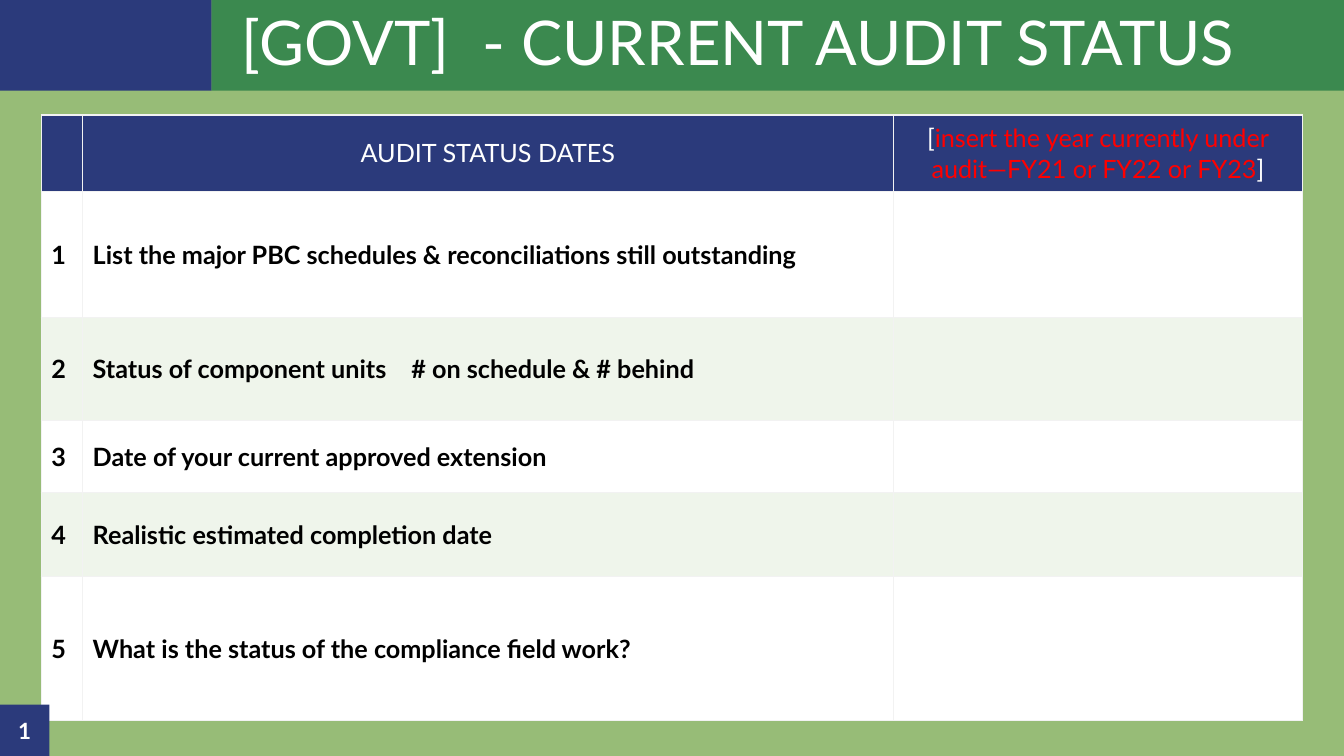
"""Build the current audit status slide."""
from dataclasses import dataclass

from lxml.etree import SubElement
from pptx import Presentation
from pptx.dml.color import RGBColor as Color
from pptx.enum.shapes import MSO_SHAPE as Shape
from pptx.enum.text import MSO_ANCHOR as Anchor, PP_ALIGN as Align
from pptx.oxml.ns import qn
from pptx.util import Inches, Pt


@dataclass(frozen=True)
class Theme:
    font: str = "Lato"
    page: str = "97BC77"
    navy: str = "2B3A7B"
    green: str = "3B894F"
    band: str = "EFF5EB"
    border: str = "F2F2F2"
    white: str = "FFFFFF"
    black: str = "000000"
    red: str = "FF0000"
    title_size: int = 44
    table_size: int = 18
    number_size: int = 16


theme = Theme()


def write(frame, spans, size, bold=False, align=Align.LEFT, tab=None):
    """Write coloured spans into the first paragraph, with an optional tab stop."""
    para = frame.paragraphs[0]
    para.alignment = align
    if tab:
        stops = SubElement(para._p.get_or_add_pPr(), qn("a:tabLst"))
        SubElement(stops, qn("a:tab"), pos=str(Inches(tab)), algn="l")
    for text, color in spans:
        span = para.add_run()
        span.text = text
        for name, value in {"name": theme.font, "size": Pt(size), "bold": bold}.items():
            setattr(span.font, name, value)
        span.font.color.rgb = Color.from_string(color)
    return para


def add_block(page, left, top, width, height, color):
    """Add a plain filled rectangle."""
    block = page.shapes.add_shape(
        Shape.RECTANGLE, Inches(left), Inches(top), Inches(width), Inches(height))
    block.shadow.inherit = False
    block.fill.solid()
    block.fill.fore_color.rgb = Color.from_string(color)
    block.line.fill.background()
    block.text_frame.word_wrap = True
    block.text_frame.vertical_anchor = Anchor.MIDDLE
    return block


deck = Presentation()
deck.slide_width, deck.slide_height = Inches(13.33), Inches(7.5)
page = deck.slides.add_slide(deck.slide_layouts[6])
page.background.fill.solid()
page.background.fill.fore_color.rgb = Color.from_string(theme.page)

add_block(page, 0, 0, 2.1, 0.9, theme.navy)
title = add_block(page, 2.1, 0, 11.23, 0.9, theme.green)
title.text_frame.margin_left = Inches(0.3)
heading = write(title.text_frame, [("[GOVT]\t- CURRENT AUDIT STATUS", theme.white)],
                theme.title_size, tab=2.39)
heading.line_spacing = 0.9

column_widths = [0.41, 8.04, 4.06]
row_heights = [0.76, 1.25, 1.02, 0.72, 0.83, 1.43]
questions = [
    "List the major PBC schedules & reconciliations still outstanding",
    "Status of component units\t# on schedule & # behind",
    "Date of your current approved extension",
    "Realistic estimated completion date",
    "What is the status of the compliance field work?",
]
header = [
    [],
    [("AUDIT STATUS DATES", theme.white)],
    [("[", theme.white),
     ("insert the year currently under audit—FY21 or FY22 or FY23", theme.red),
     ("]", theme.white)],
]
rows = [header] + [
    [[(str(number), theme.black)], [(question, theme.black)], []]
    for number, question in enumerate(questions, 1)
]

table = page.shapes.add_table(
    len(rows), len(column_widths), Inches(0.41), Inches(1.14),
    Inches(sum(column_widths)), Inches(sum(row_heights))).table
for column, width in zip(table.columns, column_widths):
    column.width = Inches(width)
for row, height in zip(table.rows, row_heights):
    row.height = Inches(height)

for row_index, row in enumerate(rows):
    is_header = row_index == 0
    if is_header:
        fill = theme.navy
    else:
        fill = theme.white if row_index % 2 else theme.band
    for column_index, spans in enumerate(row):
        cell = table.cell(row_index, column_index)
        cell.vertical_anchor = Anchor.MIDDLE
        for side in ("lnL", "lnR", "lnT", "lnB"):
            edge = SubElement(cell._tc.get_or_add_tcPr(), qn(f"a:{side}"), w=str(Pt(1)))
            paint = SubElement(edge, qn("a:solidFill"))
            SubElement(paint, qn("a:srgbClr"), val=theme.border)
        cell.fill.solid()
        cell.fill.fore_color.rgb = Color.from_string(fill)
        has_tab = any("\t" in text for text, color in spans)
        write(cell.text_frame, spans, theme.table_size, bold=not is_header,
              align=Align.CENTER if is_header else Align.LEFT,
              tab=3.16 if has_tab else None)

page_number = add_block(page, 0, 6.99, 0.49, 0.51, theme.navy)
write(page_number.text_frame, [("1", theme.white)], theme.number_size,
      bold=True, align=Align.CENTER)

deck.save("out.pptx")
